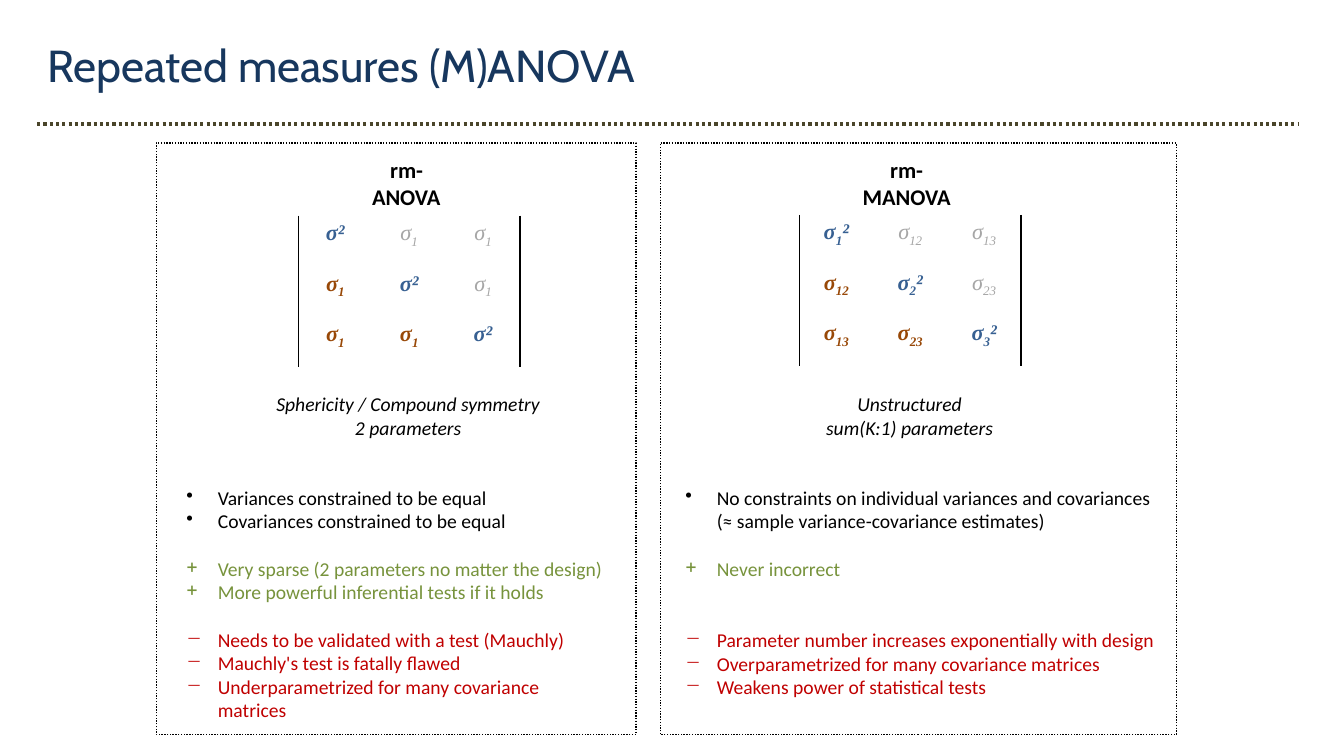
import pptx
import pptx.dml.color
import pptx.enum.dml
import pptx.enum.shapes
import pptx.enum.text
import pptx.oxml
import pptx.oxml.ns
import pptx.util
from dataclasses import dataclass

Pt = pptx.util.Pt
ALIGN = pptx.enum.text.PP_ALIGN
ANCHOR = pptx.enum.text.MSO_ANCHOR
SHAPE = pptx.enum.shapes.MSO_SHAPE

TITLE = "Repeated measures (M)ANOVA"
PANELS = [
    {
        "heading": "rm-ANOVA",
        "subscripts": [["", "1", "1"], ["1", "", "1"], ["1", "1", ""]],
        "caption": ["Sphericity / Compound symmetry", "2 parameters"],
        "notes": [
            ("•", 0, ["Variances constrained to be equal", "Covariances constrained to be equal"]),
            ("+", 1, ["Very sparse (2 parameters no matter the design)",
                      "More powerful inferential tests if it holds"]),
            ("−", 1, ["Needs to be validated with a test (Mauchly)",
                      "Mauchly's test is fatally flawed",
                      "Underparametrized for many covariance matrices"]),
        ],
        "frame": (111.6, 342.7),
        "matrix": (213.1, 154.1),
        "heading_center": 290.2,
        "caption_center": 291.6,
        "notes_box": (126, 313),
    },
    {
        "heading": "rm-MANOVA",
        "subscripts": [["1", "12", "13"], ["12", "2", "23"], ["13", "23", "3"]],
        "caption": ["Unstructured", "sum(K:1) parameters"],
        "notes": [
            ("•", 0, ["No constraints on individual variances and covariances "
                      "(≈ sample variance-covariance estimates)"]),
            ("+", 1, ["Never incorrect"]),
            ("−", 2, ["Parameter number increases exponentially with design",
                      "Overparametrized for many covariance matrices",
                      "Weakens power of statistical tests"]),
        ],
        "frame": (471.6, 368.6),
        "matrix": (571, 153.4),
        "heading_center": 647.6,
        "caption_center": 649.8,
        "notes_box": (482.4, 352.1),
    },
]


@dataclass(frozen=True)
class Theme:
    title: str = "17375E"
    rule: str = "4A452A"
    text: str = "000000"
    variance: str = "376092"
    covariance: str = "984807"
    mirrored: str = "A6A6A6"
    pro: str = "77933C"
    con: str = "C00000"
    title_font: str = "Cabin"
    body_font: str = "Calibri"
    math_font: str = "Times New Roman"
    title_size: float = 32
    heading_size: float = 16
    body_size: float = 14
    note_line: float = 17.1


THEME = Theme()
NOTE_COLORS = {"•": THEME.text, "+": THEME.pro, "−": THEME.con}
FRAME_TOP, FRAME_HEIGHT = 102.2, 422.6
HEADING_TOP, HEADING_WIDTH, HEADING_HEIGHT = 108, 80, 46
CAPTION_TOP, CAPTION_WIDTH, CAPTION_HEIGHT = 276.5, 216, 41
NOTES_TOP, NOTES_HEIGHT = 343.4, 160
NOTE_INDENT = 22.5
CELL_WIDTH, CELL_HEIGHT = 52.8, 36
NO_GRID_STYLE = "{2D5ABB26-0587-4C30-8999-92F81FD0307C}"


def rgb(color):
    return pptx.dml.color.RGBColor.from_string(color)


def add_run(paragraph, text, font, size, color, bold=False, italic=False):
    run = paragraph.add_run()
    run.text = text
    run.font.name = font
    run.font.size = Pt(size)
    run.font.color.rgb = rgb(color)
    run.font.bold = bold
    run.font.italic = italic
    return run


def xml(markup):
    namespace = pptx.oxml.ns.nsdecls("a")
    return pptx.oxml.parse_xml(markup.replace(" ", f" {namespace} ", 1))


def style_line(line, color, width):
    line.color.rgb = rgb(color)
    line.width = Pt(width)
    line.dash_style = pptx.enum.dml.MSO_LINE.ROUND_DOT


def add_text_box(slide, left, top, width, height):
    shape = slide.shapes.add_textbox(Pt(left), Pt(top), Pt(width), Pt(height))
    shape.text_frame.word_wrap = True
    return shape.text_frame


def add_lines(frame, lines, size, bold=False, italic=False):
    for index, line in enumerate(lines):
        paragraph = frame.add_paragraph() if index else frame.paragraphs[0]
        paragraph.alignment = ALIGN.CENTER
        add_run(paragraph, line, THEME.body_font, size, THEME.text, bold, italic)


def add_notes(frame, groups):
    paragraph = frame.paragraphs[0]
    for bullet, blank_lines, lines in groups:
        for index, line in enumerate(lines):
            if paragraph is None:
                paragraph = frame.add_paragraph()
            if index == 0:
                paragraph.space_before = Pt(blank_lines * THEME.note_line)
            properties = paragraph._p.get_or_add_pPr()
            properties.set("marL", str(Pt(NOTE_INDENT)))
            properties.set("indent", str(-Pt(NOTE_INDENT)))
            properties.append(xml(f'<a:buChar char="{bullet}"/>'))
            add_run(paragraph, line, THEME.body_font, THEME.body_size, NOTE_COLORS[bullet])
            paragraph = None


def add_matrix(slide, left, top, subscripts):
    count = len(subscripts)
    graphic = slide.shapes.add_table(count, count, Pt(left), Pt(top),
                                     Pt(count * CELL_WIDTH), Pt(count * CELL_HEIGHT))
    table = graphic.table
    table.first_row = table.horz_banding = False
    table._tbl.tblPr.find(pptx.oxml.ns.qn("a:tableStyleId")).text = NO_GRID_STYLE
    for index in range(count):
        table.columns[index].width = Pt(CELL_WIDTH)
        table.rows[index].height = Pt(CELL_HEIGHT)
    for row, labels in enumerate(subscripts):
        for column, subscript in enumerate(labels):
            cell = table.cell(row, column)
            cell.fill.background()
            color = (THEME.variance if row == column
                     else THEME.covariance if row > column else THEME.mirrored)
            paragraph = cell.text_frame.paragraphs[0]
            paragraph.alignment = ALIGN.CENTER
            parts = [("σ", 0), (subscript, -25000), ("²" if row == column else "", 0)]
            for text, baseline in parts:
                if text:
                    run = add_run(paragraph, text, THEME.math_font, THEME.heading_size,
                                  color, row >= column, True)
                    run._r.get_or_add_rPr().set("baseline", str(baseline))
            side = {0: "lnL", count - 1: "lnR"}.get(column)
            if side:
                cell._tc.get_or_add_tcPr().insert(0, xml(
                    f'<a:{side} w="{Pt(1)}"><a:solidFill><a:srgbClr val="{THEME.text}"/>'
                    f'</a:solidFill></a:{side}>'))


def add_panel(slide, panel):
    left, width = panel["frame"]
    frame = slide.shapes.add_shape(SHAPE.RECTANGLE, Pt(left), Pt(FRAME_TOP),
                                   Pt(width), Pt(FRAME_HEIGHT))
    frame.shadow.inherit = False
    frame.fill.background()
    style_line(frame.line, THEME.text, 1)
    add_matrix(slide, *panel["matrix"], panel["subscripts"])
    heading = add_text_box(slide, panel["heading_center"] - HEADING_WIDTH / 2, HEADING_TOP,
                           HEADING_WIDTH, HEADING_HEIGHT)
    add_lines(heading, [panel["heading"]], THEME.heading_size, bold=True)
    caption = add_text_box(slide, panel["caption_center"] - CAPTION_WIDTH / 2, CAPTION_TOP,
                           CAPTION_WIDTH, CAPTION_HEIGHT)
    add_lines(caption, panel["caption"], THEME.body_size, italic=True)
    notes_left, notes_width = panel["notes_box"]
    notes = add_text_box(slide, notes_left, NOTES_TOP, notes_width, NOTES_HEIGHT)
    add_notes(notes, panel["notes"])


def main():
    presentation = pptx.Presentation()
    presentation.slide_width, presentation.slide_height = Pt(960), Pt(540)
    slide = presentation.slides.add_slide(presentation.slide_layouts[5])
    title = slide.shapes.title
    title.left, title.top, title.width, title.height = Pt(26.6), Pt(23), Pt(838.8), Pt(46)
    title.text_frame.vertical_anchor = ANCHOR.MIDDLE
    paragraph = title.text_frame.paragraphs[0]
    paragraph.alignment = ALIGN.LEFT
    add_run(paragraph, TITLE, THEME.title_font, THEME.title_size, THEME.title)
    rule = slide.shapes.add_connector(pptx.enum.shapes.MSO_CONNECTOR.STRAIGHT,
                                      Pt(26.6), Pt(88.6), Pt(928), Pt(88.6))
    style_line(rule.line, THEME.rule, 2.25)
    rule._element.spPr.append(xml("<a:effectLst />"))
    for panel in PANELS:
        add_panel(slide, panel)
    presentation.save("out.pptx")


if __name__ == "__main__":
    main()
